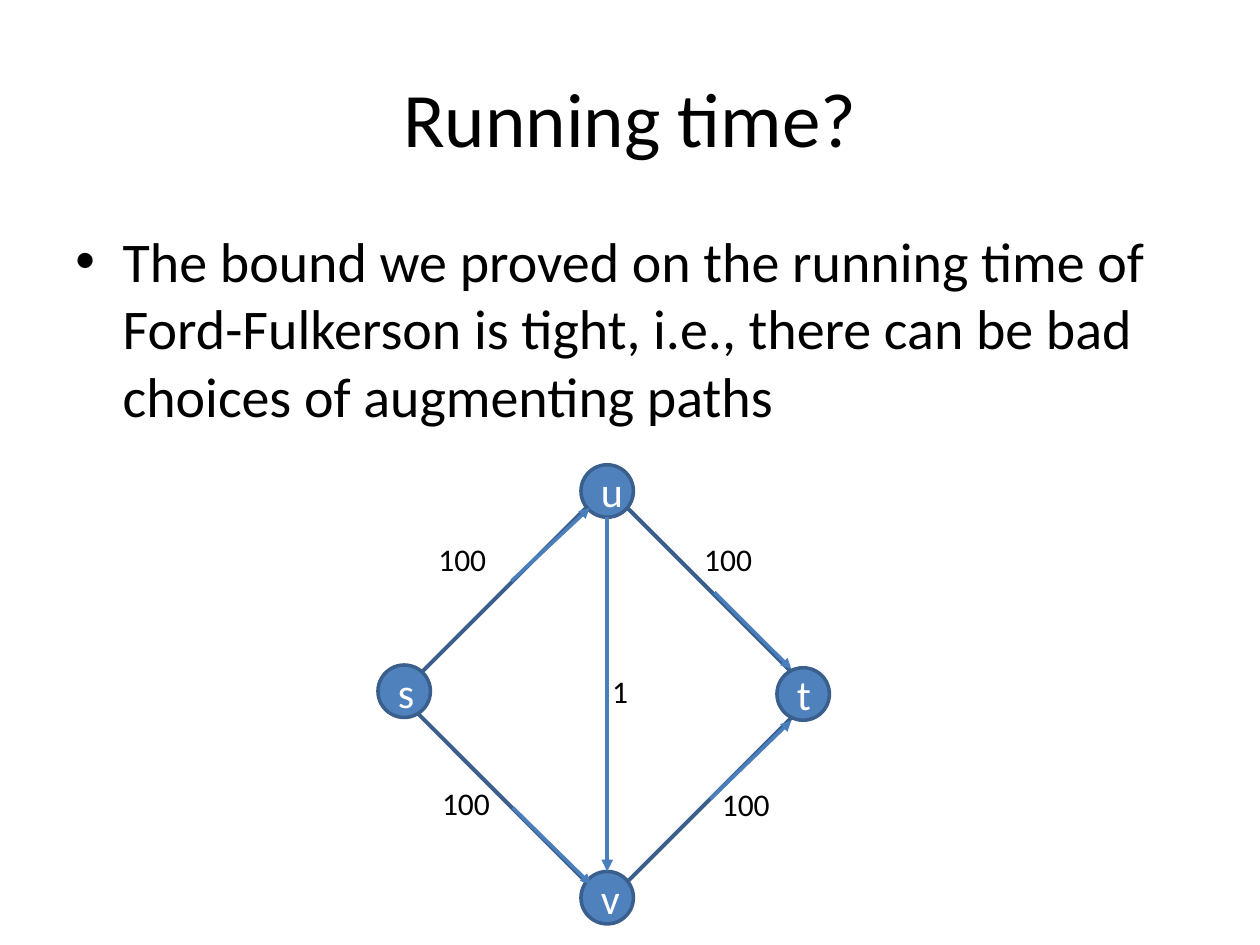
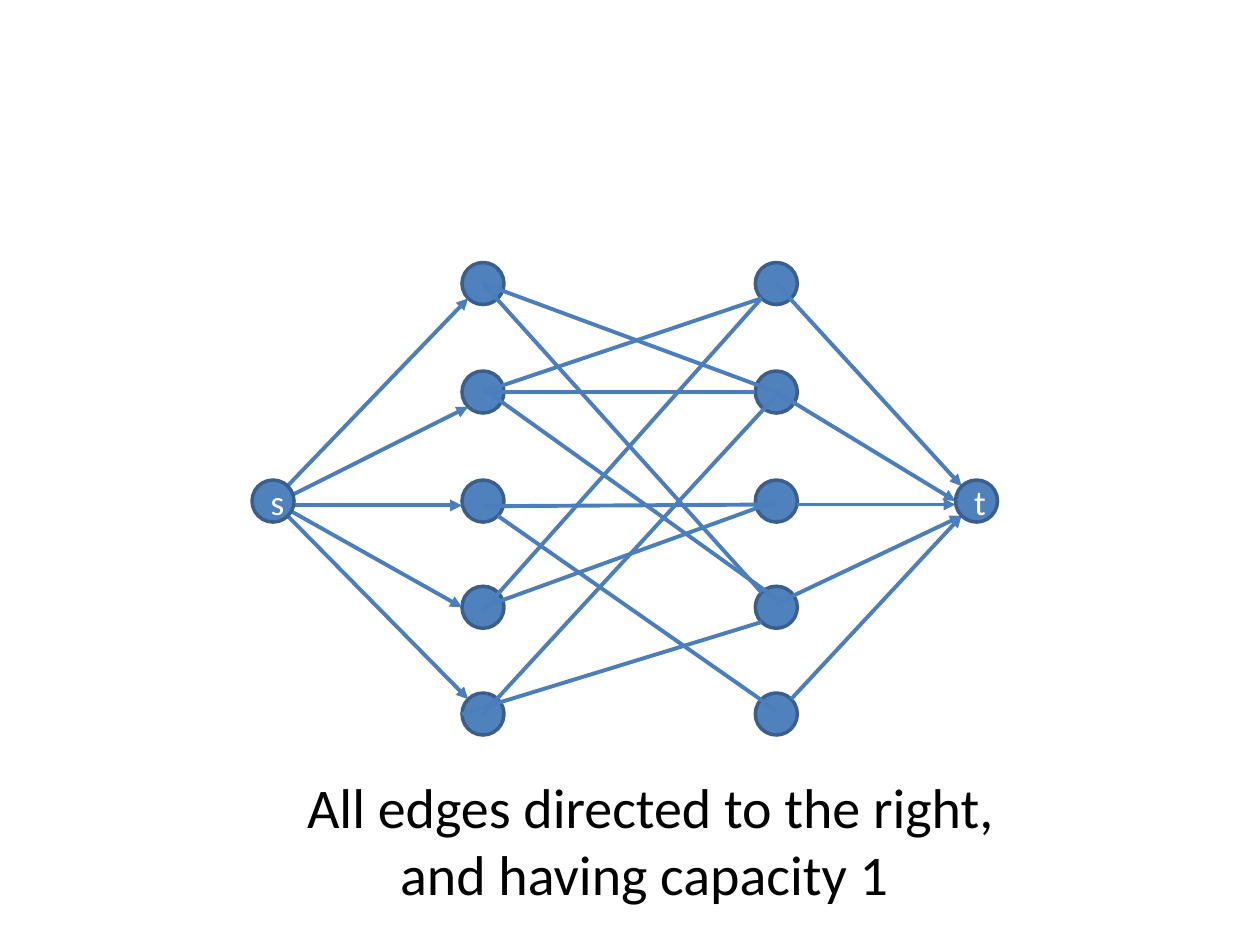
from collections import namedtuple
from dataclasses import dataclass
from math import sqrt

from lxml import etree
from pptx import Presentation
from pptx.dml.color import RGBColor
from pptx.enum.shapes import MSO_CONNECTOR, MSO_SHAPE
from pptx.enum.text import MSO_ANCHOR, PP_ALIGN
from pptx.oxml.ns import qn
from pptx.util import Pt

OVAL, RECTANGLE = MSO_SHAPE.OVAL, MSO_SHAPE.RECTANGLE
STRAIGHT = MSO_CONNECTOR.STRAIGHT
TOP, MIDDLE = MSO_ANCHOR.TOP, MSO_ANCHOR.MIDDLE
LEFT, CENTER = PP_ALIGN.LEFT, PP_ALIGN.CENTER


@dataclass(frozen=True)
class Theme:
    font: str = "Calibri"
    ink: RGBColor = RGBColor(0x00, 0x00, 0x00)
    node_ink: RGBColor = RGBColor(0xFF, 0xFF, 0xFF)
    node_fill: RGBColor = RGBColor(0x4F, 0x81, 0xBD)
    node_line: RGBColor = RGBColor(0x3A, 0x5F, 0x8C)
    edge: RGBColor = RGBColor(0x4B, 0x7E, 0xBC)
    title_size: float = 44
    body_size: float = 32
    capacity_size: float = 18
    node_width: float = 2
    edge_width: float = 2.25


THEME = Theme()
Node = namedtuple("Node", "left top size")

DIAGONAL = 1 / sqrt(2)
SIDES = {
    "C": (0, 0), "N": (0, -1), "S": (0, 1), "W": (-1, 0), "E": (1, 0),
    "NW": (-DIAGONAL, -DIAGONAL), "NE": (DIAGONAL, -DIAGONAL),
    "SW": (-DIAGONAL, DIAGONAL), "SE": (DIAGONAL, DIAGONAL),
}


def anchor_point(node, side="C", drop=0):
    radius = node.size / 2
    dx, dy = SIDES[side]
    return (node.left + radius * (1 + dx), node.top + radius * (1 + dy) + drop)


def add_run(paragraph, text, size, color):
    run = paragraph.add_run()
    run.text = text
    run.font.name = THEME.font
    run.font.size = Pt(size)
    run.font.color.rgb = color


def add_text(slide, box, lines, size, align=LEFT, anchor=TOP, wrap=True):
    frame = slide.shapes.add_textbox(*map(Pt, box)).text_frame
    frame.word_wrap = wrap
    frame.vertical_anchor = anchor
    for index, line in enumerate(lines):
        paragraph = frame.add_paragraph() if index else frame.paragraphs[0]
        paragraph.alignment = align
        add_run(paragraph, line, size, THEME.ink)
    return frame


def add_title(slide, text):
    add_text(slide, (36, 21.6, 648, 90), [text], THEME.title_size, CENTER, MIDDLE)


def add_bullet(slide, box, text):
    paragraph = add_text(slide, box, [text], THEME.body_size).paragraphs[0]
    paragraph.space_before = Pt(THEME.body_size * 0.2)
    properties = paragraph._p.get_or_add_pPr()
    properties.set("marL", str(Pt(27)))
    properties.set("indent", str(Pt(-27)))
    etree.SubElement(properties, qn("a:buFont"), typeface="Arial")
    etree.SubElement(properties, qn("a:buChar"), char="•")


def add_outline(slide, kind, box, width):
    shape = slide.shapes.add_shape(kind, *map(Pt, box))
    shape.shadow.inherit = False
    shape.fill.background()
    shape.line.color.rgb = THEME.node_line
    shape.line.width = Pt(width)
    return shape


def add_node(slide, node, name="", size=24):
    circle = add_outline(slide, OVAL, (node.left, node.top, node.size, node.size),
                         THEME.node_width)
    circle.fill.solid()
    circle.fill.fore_color.rgb = THEME.node_fill
    if name:
        paragraph = circle.text_frame.paragraphs[0]
        paragraph.alignment = CENTER
        add_run(paragraph, name, size, THEME.node_ink)


def add_edge(slide, start, end, arrow=False, width=THEME.edge_width):
    edge = slide.shapes.add_connector(STRAIGHT, *map(Pt, start + end))
    edge.line.color.rgb = THEME.edge
    edge.line.width = Pt(width)
    if arrow:
        etree.SubElement(edge.line._get_or_add_ln(), qn("a:tailEnd"), type="triangle")
    etree.SubElement(edge._element.spPr, qn("a:effectLst"))


def build_running_time(slide):
    add_title(slide, "Running time?")
    add_bullet(slide, (36, 126, 648, 132),
               "The bound we proved on the running time of Ford-Fulkerson is tight, "
               "i.e., there can be bad choices of augmenting paths")

    diamond = add_outline(slide, RECTANGLE, (262.8, 313.2, 167.8, 167.8), THEME.edge_width)
    diamond.rotation = 45

    nodes = {
        "s": Node(216, 380, 30),
        "t": Node(444, 381.6, 30),
        "u": Node(332, 265.6, 30),
        "v": Node(332, 498, 30),
    }
    for name, node in nodes.items():
        add_node(slide, node, name)

    add_edge(slide, anchor_point(nodes["u"], "S"), anchor_point(nodes["v"], "N"), arrow=True)
    direction_arrows = [
        ((292.3, 332), (337, 290.2)),
        ((408.2, 338.4), (452.2, 382.3)),
        ((293, 461.5), (337.7, 505.4)),
        ((406, 456.5), (452.2, 411.8)),
    ]
    for start, end in direction_arrows:
        add_edge(slide, start, end, arrow=True, width=THEME.node_width)

    capacities = [
        ("100", 243.4, 305.3), ("100", 395.3, 305.3),
        ("100", 245.5, 444.5), ("100", 405.4, 445), ("1", 342.7, 380.2),
    ]
    for capacity, left, top in capacities:
        width = 42.5 if len(capacity) > 1 else 23.8
        add_text(slide, (left, top, width, 28.8), [capacity], THEME.capacity_size, wrap=False)


def build_matching_network(slide):
    rows = (150, 212, 274.3, 335, 396)
    left_nodes = [Node(264, top, 24) for top in rows]
    right_nodes = [Node(431.6, top, 24) for top in rows]
    source, sink = Node(144, 274.3, 24), Node(546, 274.3, 24)

    for node in left_nodes + right_nodes:
        add_node(slide, node)

    matching_edges = [
        (0, ("C",), 1, ("C",)),
        (0, ("C",), 3, ("NW",)),
        (1, ("C",), 1, ("W",)),
        (1, ("C",), 0, ("SW",)),
        (1, ("C", -2), 3, ("C", -5)),
        (2, ("C", 3), 2, ("C", 2)),
        (3, ("C",), 2, ("C",)),
        (3, ("C", 2), 0, ("SW",)),
        (2, ("SE",), 4, ("C", -2)),
        (4, ("C",), 1, ("C", 2)),
        (4, ("W",), 3, ("SW",)),
    ]
    for left, leaving, right, entering in matching_edges:
        add_edge(slide, anchor_point(left_nodes[left], *leaving),
                 anchor_point(right_nodes[right], *entering))

    source_edges = [
        (("C",), ("SW",)), (("C", 2), ("SW",)), (("E", 2.5), ("W", 2.5)),
        (("C",), ("W",)), (("C",), ("NW",)),
    ]
    for node, (leaving, entering) in zip(left_nodes, source_edges):
        add_edge(slide, anchor_point(source, *leaving), anchor_point(node, *entering), arrow=True)
    add_node(slide, source, "s", 20)

    sink_edges = [
        (("C",), ("NW",)), (("C",), ("W",)), (("E", 2), ("W", 2)),
        (("C", -2), ("SW",)), (("NE",), ("SW",)),
    ]
    for node, (leaving, entering) in zip(right_nodes, sink_edges):
        add_edge(slide, anchor_point(node, *leaving), anchor_point(sink, *entering), arrow=True)
    add_node(slide, sink, "t", 20)

    add_text(slide, (158.4, 437.8, 427, 108.7),
             ["All edges directed to the right,", "and having capacity 1 "],
             THEME.body_size, CENTER, wrap=False)


def main():
    deck = Presentation()
    deck.slide_width, deck.slide_height = Pt(720), Pt(540)
    blank = deck.slide_layouts[6]
    for build in (build_running_time, build_matching_network):
        build(deck.slides.add_slide(blank))
    deck.save("out.pptx")


if __name__ == "__main__":
    main()
